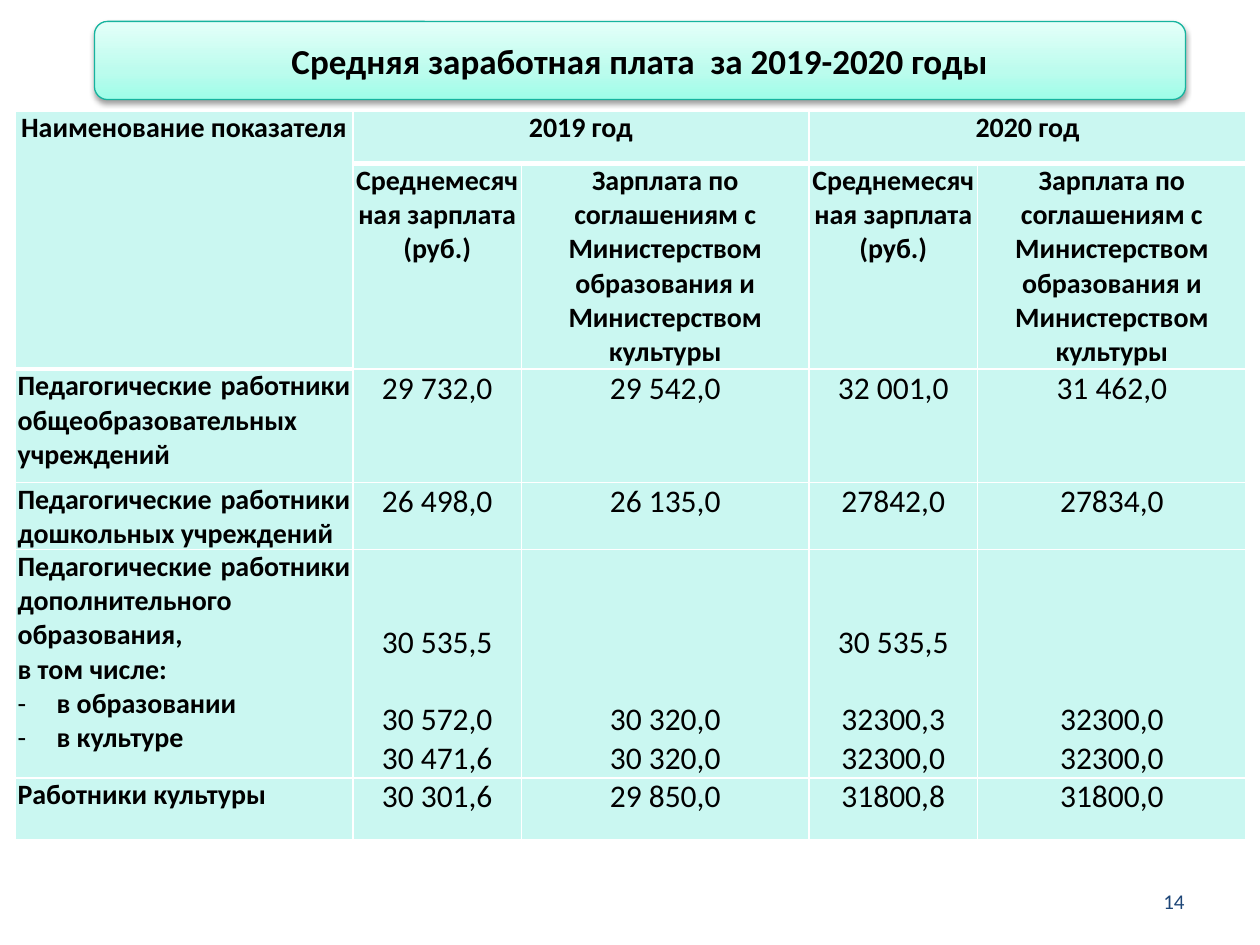
from copy import deepcopy

from lxml.etree import SubElement
from pptx import Presentation
from pptx.dml.color import RGBColor
from pptx.enum.shapes import MSO_SHAPE
from pptx.enum.text import MSO_ANCHOR, PP_ALIGN
from pptx.oxml.ns import qn
from pptx.util import Inches, Pt

COLORS = {"text": "000000", "cell": "CAF7F1", "border": "FFFFFF",
          "line": "16B39E", "number": "1E4677", "shadow": "000000"}
GRADIENT = [(0, "9DFDE8"), (0.35, "BBFCED"), (1, "E4FFF9")]
FONT = "Calibri"
COLS = [2.68, 1.34, 2.28, 1.34, 2.13]
ROWS = [0.42, 1.63, 0.9, 0.53, 1.81, 0.49]
LINE = 22  # height in points of one line of 18 pt text
SALARY = "Среднемесячная зарплата (руб.)"
AGREED = ("Зарплата по соглашениям с Министерством образования "
          "и Министерством культуры")
STAFF = [
    ("Педагогические работники общеобразовательных учреждений",
     "29 732,0", "29 542,0", "32 001,0", "31 462,0"),
    ("Педагогические работники дошкольных учреждений",
     "26 498,0", "26 135,0", "27842,0", "27834,0"),
    ("Педагогические работники дополнительного образования,\n"
     "в том числе:\nв образовании\nв культуре",
     "30 535,5\n30 572,0\n30 471,6", "30 320,0\n30 320,0",
     "30 535,5\n32300,3\n32300,0", "32300,0\n32300,0"),
    ("Работники культуры", "30 301,6", "29 850,0", "31800,8", "31800,0"),
]


def rgb(name):
    return RGBColor.from_string(COLORS[name])


def write(frame, text, size, bold=False, align=PP_ALIGN.CENTER, color="text"):
    frame.text = text
    for para in frame.paragraphs:
        para.alignment = align
        for run in para.runs:
            font = run.font
            font.name, font.size, font.bold = FONT, Pt(size), bold
            font.color.rgb = rgb(color)


def add_title(slide, text):
    box = slide.shapes.add_shape(MSO_SHAPE.ROUNDED_RECTANGLE, Inches(0.75),
                                 Inches(0.17), Inches(8.66), Inches(0.62))
    box.fill.gradient()
    box.fill.gradient_angle = 90
    last = box._element.spPr.find(".//" + qn("a:gs") + "[last()]")
    last.addnext(deepcopy(last))
    for stop, (place, color) in zip(box.fill.gradient_stops, GRADIENT):
        stop.position = place
        stop.color.rgb = RGBColor.from_string(color)
    box.line.color.rgb = rgb("line")
    box.line.width = Pt(0.75)
    add_shadow(box)
    box.text_frame.vertical_anchor = MSO_ANCHOR.MIDDLE
    write(box.text_frame, text, 20, bold=True)


def add_shadow(shape):
    shape.shadow.inherit = False
    effects = shape._element.spPr.find(qn("a:effectLst"))
    outer = SubElement(effects, qn("a:outerShdw"), blurRad=str(Pt(3.1)),
                       dist=str(Pt(1.6)), dir="5400000", rotWithShape="0")
    color = SubElement(outer, qn("a:srgbClr"), val=COLORS["shadow"])
    SubElement(color, qn("a:alpha"), val="38000")


def style_cell(cell, bottom):
    """Set margins, white borders and fill; bottom is that border's width."""
    cell.margin_left = cell.margin_right = Inches(0.02)
    cell.margin_top = cell.margin_bottom = 0
    props = cell._tc.get_or_add_tcPr()
    for side, width in zip("LRTB", (1, 1, 1, bottom)):
        line = SubElement(props, qn("a:ln" + side), w=str(Pt(width)))
        paint = SubElement(line, qn("a:solidFill"))
        SubElement(paint, qn("a:srgbClr"), val=COLORS["border"])
    cell.fill.solid()
    cell.fill.fore_color.rgb = rgb("cell")


def add_dash(para):
    props = para._p.get_or_add_pPr()
    props.set("marL", str(Inches(0.31)))
    props.set("indent", str(-Inches(0.31)))
    SubElement(props, qn("a:buFont"), typeface=FONT)
    SubElement(props, qn("a:buChar"), char="-")


def fill_head(table):
    for col, text in ((0, "Наименование показателя"),
                      (1, "2019 год"), (3, "2020 год")):
        write(table.cell(0, col).text_frame, text, 16, bold=True)
    for col, text in enumerate((SALARY, AGREED) * 2, 1):
        write(table.cell(1, col).text_frame, text, 16, bold=True)
    table.cell(0, 0).merge(table.cell(1, 0))
    for col in (1, 3):
        table.cell(0, col).merge(table.cell(0, col + 1))


def fill_body(table):
    for row, (name, *values) in enumerate(STAFF, 2):
        label = table.cell(row, 0).text_frame
        write(label, name, 16, bold=True, align=PP_ALIGN.JUSTIFY)
        for para in label.paragraphs[2:]:
            add_dash(para)
        for col, value in enumerate(values, 1):
            cell = table.cell(row, col)
            write(cell.text_frame, value, 18)
            paras = cell.text_frame.paragraphs
            if len(paras) > 1:
                cell.vertical_anchor = MSO_ANCHOR.BOTTOM
            if len(paras) == 3:
                paras[0].space_after = Pt(LINE)


def add_grid(slide):
    frame = slide.shapes.add_table(len(ROWS), len(COLS), Inches(0.12),
                                   Inches(0.88), Inches(sum(COLS)),
                                   Inches(sum(ROWS)))
    table = frame.table
    for col, width in zip(table.columns, COLS):
        col.width = Inches(width)
    for index, height in enumerate(ROWS):
        table.rows[index].height = Inches(height)
        for col in range(len(COLS)):
            thick = index == 0 or (index, col) == (1, 0)
            style_cell(table.cell(index, col), 3 if thick else 1)
    fill_head(table)
    fill_body(table)


def add_number(slide, text):
    box = slide.shapes.add_textbox(Inches(7.17), Inches(6.95),
                                   Inches(2.33), Inches(0.4))
    box.text_frame.word_wrap = True
    box.text_frame.vertical_anchor = MSO_ANCHOR.MIDDLE
    write(box.text_frame, text, 12, align=PP_ALIGN.RIGHT, color="number")


def main():
    deck = Presentation()
    deck.slide_width, deck.slide_height = Inches(10), Inches(7.5)
    slide = deck.slides.add_slide(deck.slide_layouts[6])
    add_number(slide, "14")
    add_title(slide, "Средняя заработная плата  за 2019-2020 годы")
    add_grid(slide)
    deck.save("out.pptx")


if __name__ == "__main__":
    main()
